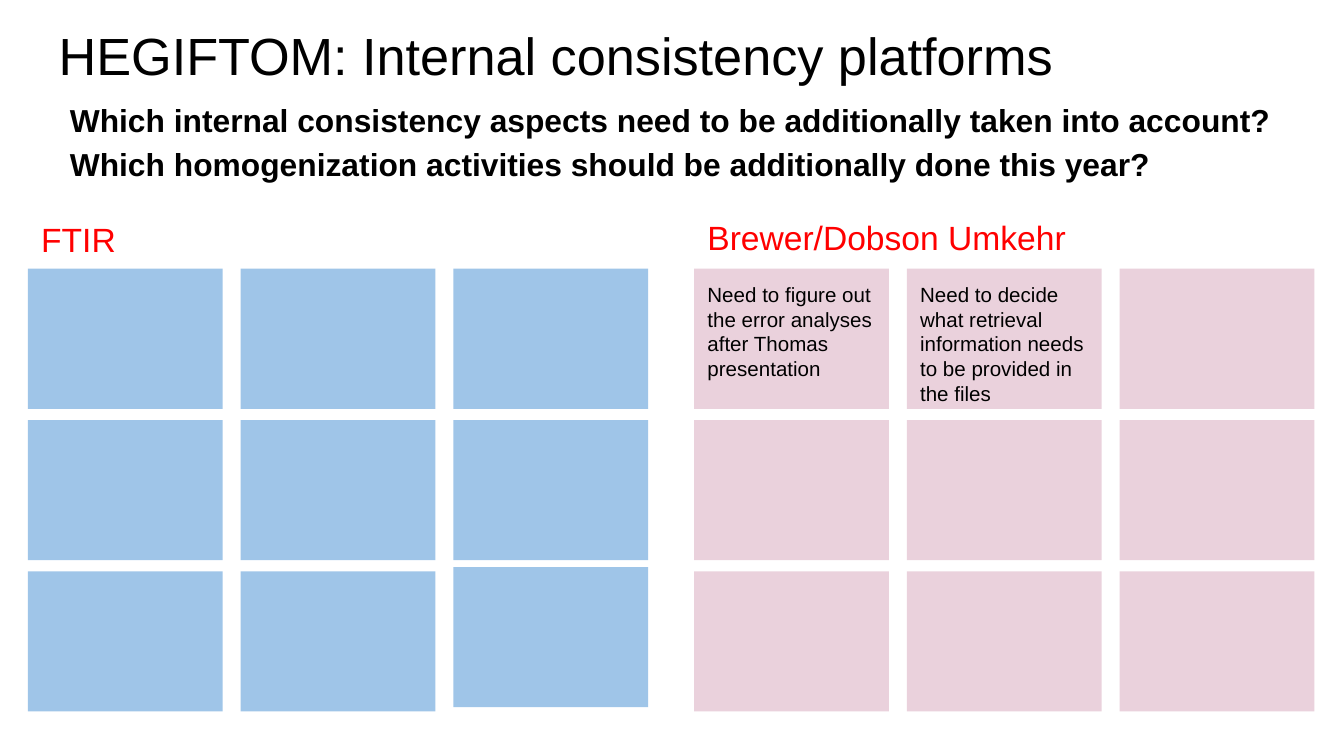
"""Build the internal consistency slide with two boards of note cards."""
from pptx import Presentation
from pptx.dml.color import RGBColor
from pptx.enum.shapes import MSO_SHAPE
from pptx.enum.text import MSO_ANCHOR, PP_ALIGN
from pptx.util import Cm, Pt

RECTANGLE = MSO_SHAPE.RECTANGLE
TOP = MSO_ANCHOR.TOP
LEFT = PP_ALIGN.LEFT

TITLE = "HEGIFTOM: Internal consistency platforms"
QUESTIONS = (
    "Which internal consistency aspects need to be additionally taken into account? "
    "Which homogenization activities should be additionally done this year?"
)
BOARDS = [
    {"heading": "FTIR", "left": 0.53, "heading_top": 3.89, "color": "9FC5E8",
     "notes": {}, "raised": {(2, 2): 0.08}},
    {"heading": "Brewer/Dobson Umkehr", "left": 13.12, "heading_top": 3.86, "color": "EAD1DC",
     "notes": {
         (0, 0): "Need to figure out the error analyses after Thomas presentation",
         (0, 1): "Need to decide what retrieval information needs to be provided in the files",
     }, "raised": {}},
]
ROWS = COLUMNS = 3
CARD_WIDTH, CARD_HEIGHT = 3.68, 2.65
COLUMN_STEP, ROW_STEP = 4.02, 2.86
CARDS_TOP = 5.08
INSET = Cm(0.25)


def rgb(color):
    return RGBColor.from_string(color)


def write(shape, text, size, color="000000", bold=False, spacing=1.0):
    frame = shape.text_frame
    frame.word_wrap = True
    frame.vertical_anchor = TOP
    frame.margin_left = frame.margin_right = INSET
    frame.margin_top = frame.margin_bottom = INSET
    paragraph = frame.paragraphs[0]
    paragraph.alignment = LEFT
    paragraph.line_spacing = spacing
    run = paragraph.add_run()
    run.text = text
    run.font.name = "Arial"
    run.font.size = Pt(size)
    run.font.bold = bold
    run.font.color.rgb = rgb(color)


def add_text(slide, left, top, width, height, text, size, **style):
    box = slide.shapes.add_textbox(Cm(left), Cm(top), Cm(width), Cm(height))
    write(box, text, size, **style)


def add_card(slide, left, top, color, note):
    card = slide.shapes.add_shape(
        RECTANGLE, Cm(left), Cm(top), Cm(CARD_WIDTH), Cm(CARD_HEIGHT))
    card.shadow.inherit = False
    card.fill.solid()
    card.fill.fore_color.rgb = rgb(color)
    card.line.fill.background()
    if note:
        write(card, note, 11)


def add_board(slide, board):
    for row in range(ROWS):
        for column in range(COLUMNS):
            cell = (row, column)
            left = board["left"] + column * COLUMN_STEP
            top = CARDS_TOP + row * ROW_STEP - board["raised"].get(cell, 0)
            add_card(slide, left, top, board["color"], board["notes"].get(cell))
    add_text(slide, board["left"], board["heading_top"], 10.31, 1.19,
             board["heading"], 18, color="FF0000")


def main():
    presentation = Presentation()
    presentation.slide_width, presentation.slide_height = Cm(25.4), Cm(14.29)
    slide = presentation.slides.add_slide(presentation.slide_layouts.get_by_name("Title Only"))
    title = slide.shapes.title
    title.left, title.top, title.width, title.height = Cm(0.86), Cm(0.18), Cm(23.67), Cm(1.6)
    write(title, TITLE, 28)
    add_text(slide, 1.07, 1.55, 23.67, 1.19, QUESTIONS, 17, bold=True, spacing=1.15)
    for board in BOARDS:
        add_board(slide, board)
    presentation.save("out.pptx")


if __name__ == "__main__":
    main()
